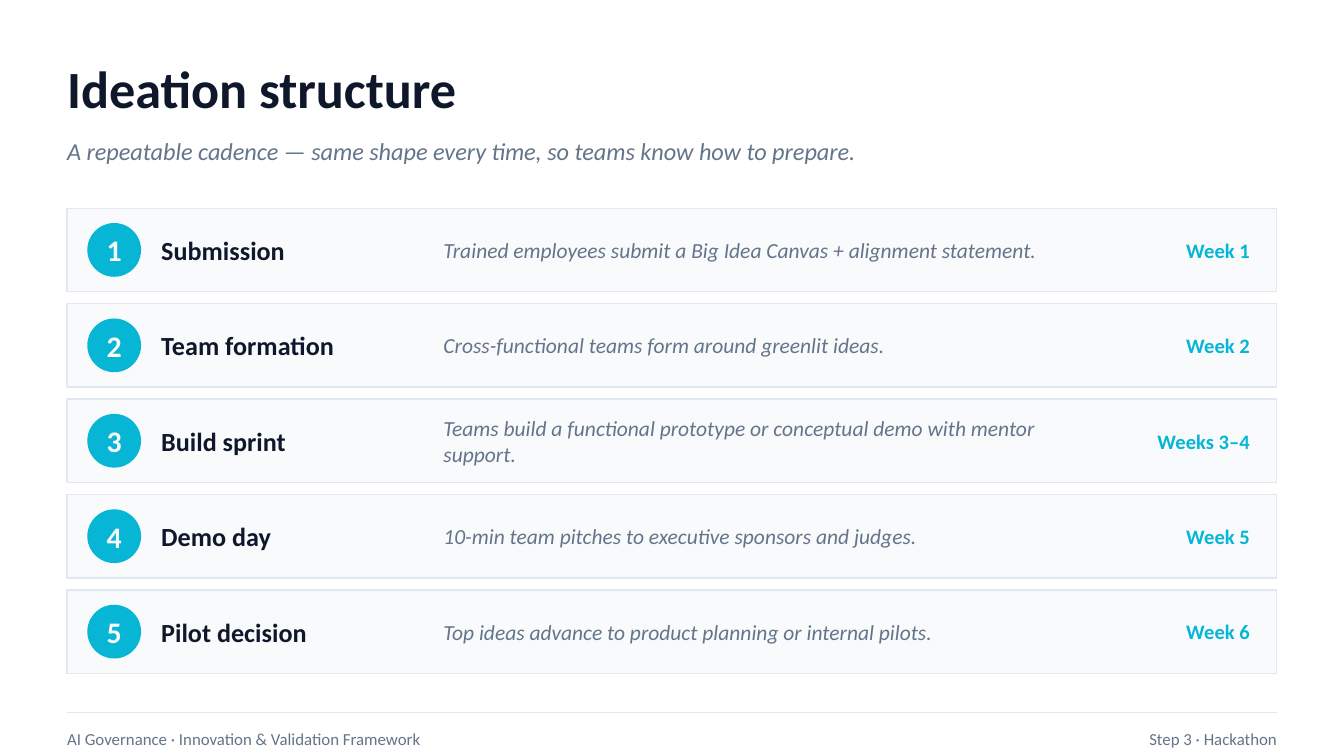
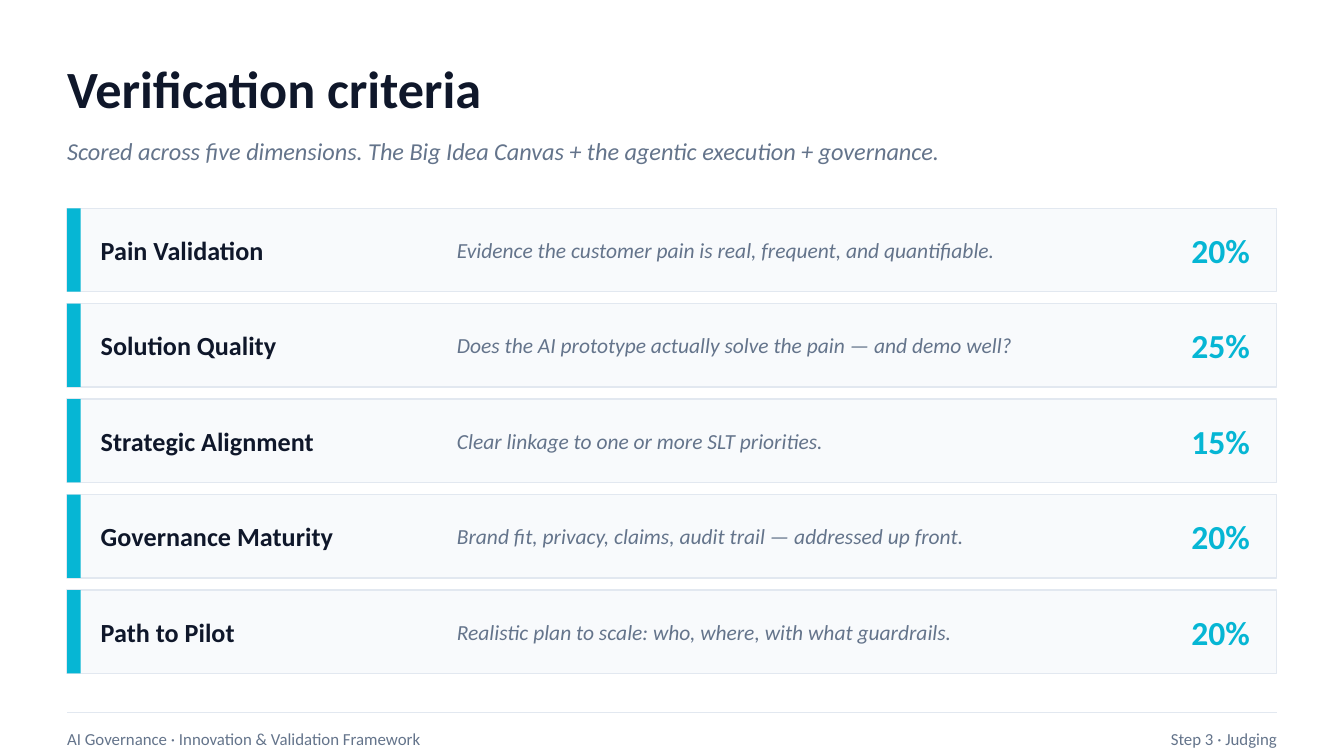
from dataclasses import dataclass

import pptx
import pptx.dml.color
import pptx.enum.shapes
import pptx.enum.text
import pptx.oxml.ns
import pptx.slide
import pptx.util
from lxml import etree

Inches = pptx.util.Inches
Pt = pptx.util.Pt
SHAPE = pptx.enum.shapes.MSO_SHAPE
ALIGN = pptx.enum.text.PP_ALIGN

COLORS = {
    "background": "FFFFFF",
    "ink": "0F172A",
    "muted": "64748B",
    "accent": "06B6D4",
    "card": "F8FAFC",
    "rule": "E2E8F0",
}
FONT = "Calibri"
LEFT, WIDTH = 0.5, 9
ROW_TOP, ROW_HEIGHT, ROW_PITCH = 1.55, 0.62, 0.71
BADGE_LEFT, BADGE = 0.65, 0.4
FOOTER = "AI Governance · Innovation & Validation Framework"


@dataclass(frozen=True)
class Style:
    size: float
    color: str
    bold: bool = False
    italic: bool = False
    align: ALIGN = ALIGN.LEFT


@dataclass(frozen=True)
class Row:
    name: str
    detail: str
    value: str


@dataclass(frozen=True)
class Column:
    left: float
    width: float
    style: Style


@dataclass(frozen=True)
class Page:
    title: str
    subtitle: str
    section: str
    numbered: bool
    columns: tuple[Column, Column, Column]
    rows: tuple[Row, ...]


TITLE = Style(28, "ink", bold=True)
SUBTITLE = Style(13, "muted", italic=True)
NUMBER = Style(16, "card", bold=True, align=ALIGN.CENTER)
NAME = Style(14, "ink", bold=True)
DETAIL = Style(11.5, "muted", italic=True)
WEEK = Style(11, "accent", bold=True, align=ALIGN.RIGHT)
WEIGHT = Style(18, "accent", bold=True, align=ALIGN.RIGHT)
FOOTER_LEFT = Style(9, "muted")
FOOTER_RIGHT = Style(9, "muted", align=ALIGN.RIGHT)

PAGES = (
    Page(
        "Ideation structure",
        "A repeatable cadence — same shape every time, so teams know how to prepare.",
        "Step 3 · Hackathon",
        True,
        (Column(1.2, 2, NAME), Column(3.3, 4.7, DETAIL), Column(8.1, 1.2, WEEK)),
        (
            Row("Submission", "Trained employees submit a Big Idea Canvas + alignment statement.", "Week 1"),
            Row("Team formation", "Cross-functional teams form around greenlit ideas.", "Week 2"),
            Row(
                "Build sprint",
                "Teams build a functional prototype or conceptual demo with mentor support.",
                "Weeks 3–4",
            ),
            Row("Demo day", "10-min team pitches to executive sponsors and judges.", "Week 5"),
            Row("Pilot decision", "Top ideas advance to product planning or internal pilots.", "Week 6"),
        ),
    ),
    Page(
        "Verification criteria",
        "Scored across five dimensions. The Big Idea Canvas + the agentic execution + governance.",
        "Step 3 · Judging",
        False,
        (Column(0.75, 2.5, NAME), Column(3.4, 5, DETAIL), Column(8.5, 0.8, WEIGHT)),
        (
            Row("Pain Validation", "Evidence the customer pain is real, frequent, and quantifiable.", "20%"),
            Row("Solution Quality", "Does the AI prototype actually solve the pain — and demo well?", "25%"),
            Row("Strategic Alignment", "Clear linkage to one or more SLT priorities.", "15%"),
            Row("Governance Maturity", "Brand fit, privacy, claims, audit trail — addressed up front.", "20%"),
            Row("Path to Pilot", "Realistic plan to scale: who, where, with what guardrails.", "20%"),
        ),
    ),
)


def rgb(name: str) -> pptx.dml.color.RGBColor:
    return pptx.dml.color.RGBColor.from_string(COLORS[name])


def add_text(
    s: pptx.slide.Slide, left: float, top: float, width: float, height: float, text: str, style: Style
) -> None:
    sp = s.shapes.add_textbox(Inches(left), Inches(top), Inches(width), Inches(height))
    tf = sp.text_frame
    tf.word_wrap = True
    tf.vertical_anchor = pptx.enum.text.MSO_ANCHOR.MIDDLE
    tf.margin_left = tf.margin_top = tf.margin_right = tf.margin_bottom = 0
    p = tf.paragraphs[0]
    p.text = text
    p.alignment = style.align
    p.font.name = FONT
    p.font.size = Pt(style.size)
    p.font.bold = style.bold
    p.font.italic = style.italic
    p.font.color.rgb = rgb(style.color)


def add_box(
    s: pptx.slide.Slide,
    kind: SHAPE,
    left: float,
    top: float,
    width: float,
    height: float,
    fill: str,
    line: str | None = None,
) -> None:
    sp = s.shapes.add_shape(kind, Inches(left), Inches(top), Inches(width), Inches(height))
    sp.shadow.inherit = False
    sp.fill.solid()
    sp.fill.fore_color.rgb = rgb(fill)
    if line:
        sp.line.color.rgb = rgb(line)
        sp.line.width = Pt(0.75)
    else:
        sp.line.fill.background()


def add_header(s: pptx.slide.Slide, page: Page) -> None:
    s.background.fill.solid()
    s.background.fill.fore_color.rgb = rgb("background")
    add_text(s, LEFT, 0.35, WIDTH, 0.6, page.title, TITLE)
    add_text(s, LEFT, 0.95, WIDTH, 0.35, page.subtitle, SUBTITLE)


def add_footer(s: pptx.slide.Slide, section: str) -> None:
    rule = s.shapes.add_connector(
        pptx.enum.shapes.MSO_CONNECTOR.STRAIGHT, Inches(LEFT), Inches(5.3), Inches(LEFT + WIDTH), Inches(5.3)
    )
    rule.line.color.rgb = rgb("rule")
    rule.line.width = Pt(0.75)
    etree.SubElement(rule.element.spPr, pptx.oxml.ns.qn("a:effectLst"))
    add_text(s, LEFT, 5.35, 5.5, 0.3, FOOTER, FOOTER_LEFT)
    add_text(s, 6, 5.35, 3.5, 0.3, section, FOOTER_RIGHT)


def add_row(s: pptx.slide.Slide, page: Page, index: int, row: Row) -> None:
    top = round(ROW_TOP + index * ROW_PITCH, 2)
    add_box(s, SHAPE.RECTANGLE, LEFT, top, WIDTH, ROW_HEIGHT, "card", "rule")
    if page.numbered:
        badge_top = round(top + (ROW_HEIGHT - BADGE) / 2, 2)
        add_box(s, SHAPE.OVAL, BADGE_LEFT, badge_top, BADGE, BADGE, "accent")
        add_text(s, BADGE_LEFT, badge_top, BADGE, BADGE, str(index + 1), NUMBER)
    else:
        add_box(s, SHAPE.RECTANGLE, LEFT, top, 0.1, ROW_HEIGHT, "accent")
    for column, text in zip(page.columns, (row.name, row.detail, row.value)):
        add_text(s, column.left, top, column.width, ROW_HEIGHT, text, column.style)


def main() -> None:
    prs = pptx.Presentation()
    prs.slide_width = Inches(10)
    prs.slide_height = Inches(10) * 9 // 16
    for page in PAGES:
        s = prs.slides.add_slide(prs.slide_layouts[6])
        add_header(s, page)
        for index, row in enumerate(page.rows):
            add_row(s, page, index, row)
        add_footer(s, page.section)
    prs.save("out.pptx")


if __name__ == "__main__":
    main()
